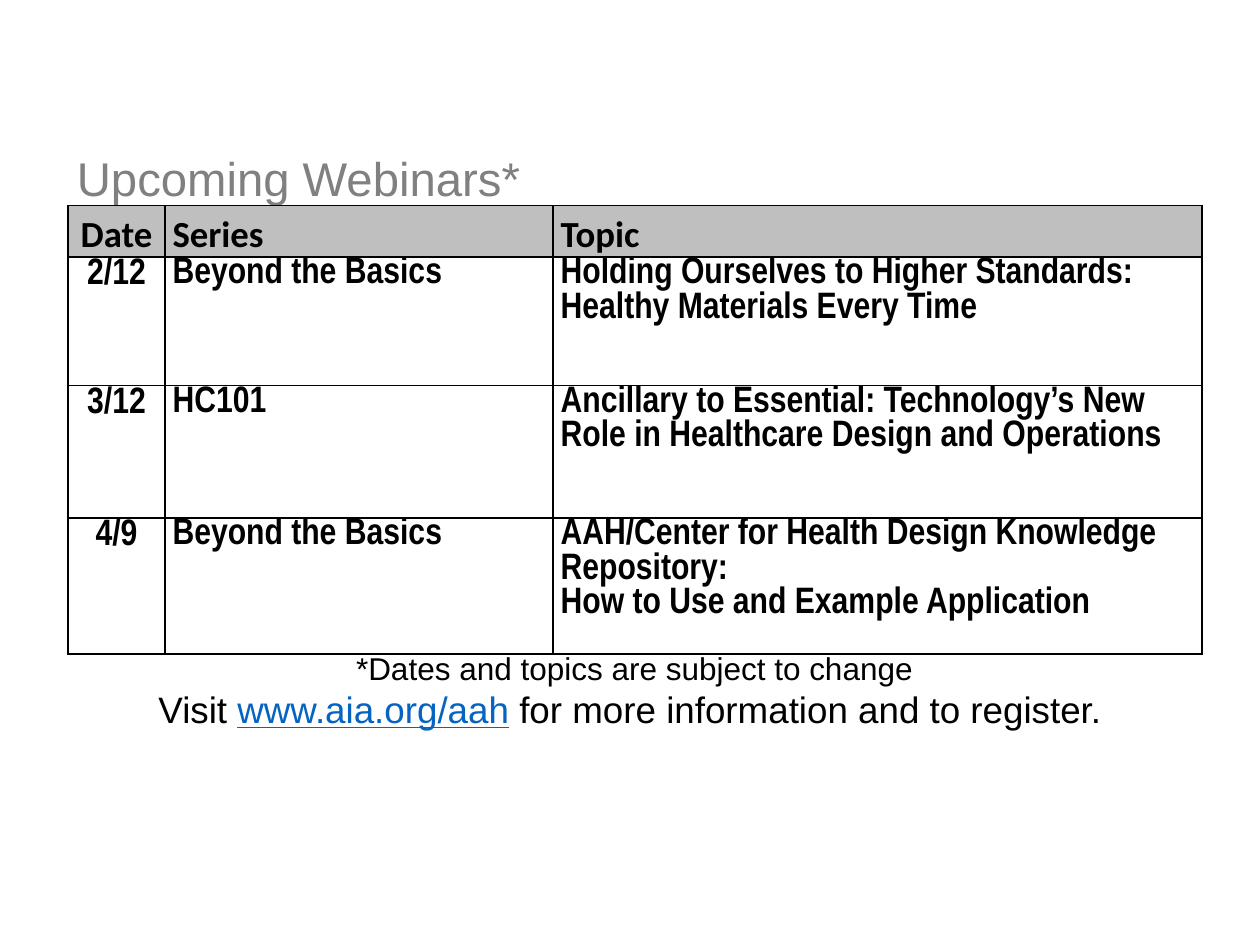
from lxml.etree import SubElement
from pptx import Presentation
from pptx.dml.color import RGBColor
from pptx.enum.text import MSO_ANCHOR as Anchor, MSO_AUTO_SIZE as AutoSize, PP_ALIGN as Align
from pptx.oxml.ns import qn
from pptx.util import Inches, Pt

BLACK, GREY, SILVER, LINK = "000000", "808080", "BFBFBF", "0563C1"
COLUMNS = [0.77, 3.08, 5.15]
ROWS = [0.38, 1.02, 1.05, 1.08]
LEFT, TABLE_TOP = 0.54, 1.63
WEBINARS = [
    ("Date", "Series", "Topic"),
    ("2/12", "Beyond the Basics",
     "Holding Ourselves to Higher Standards:\nHealthy Materials Every Time"),
    ("3/12", "HC101",
     "Ancillary to Essential: Technology’s New Role in Healthcare Design and Operations"),
    ("4/9", "Beyond the Basics",
     "AAH/Center for Health Design Knowledge Repository:\nHow to Use and Example Application"),
]


def color(value):
    return RGBColor.from_string(value)


def style(span, size, name="Arial", fill=BLACK, bold=False):
    font = span.font
    font.size, font.name, font.bold = Pt(size), name, bold
    font.color.rgb = color(fill)


def set_margins(holder, sides, top, bottom):
    holder.margin_left = holder.margin_right = Inches(sides)
    holder.margin_top, holder.margin_bottom = Inches(top), Inches(bottom)


def add_borders(cell):
    """Draw a thin black line on all four sides of a cell."""
    properties = cell._tc.get_or_add_tcPr()
    for position, side in enumerate(("lnL", "lnR", "lnT", "lnB")):
        line = SubElement(properties, qn(f"a:{side}"), w=str(Pt(1)))
        fill = SubElement(line, qn("a:solidFill"))
        SubElement(fill, qn("a:srgbClr"), val=BLACK)
        properties.remove(line)
        properties.insert(position, line)


def add_title(page, text):
    title = page.shapes.title
    title.left, title.top, title.width, title.height = map(Inches, (LEFT, 0.94, sum(COLUMNS), 0.94))
    frame = title.text_frame
    frame.text = text
    frame.auto_size = AutoSize.NONE
    frame.vertical_anchor = Anchor.MIDDLE
    set_margins(frame, 0.07, 0.04, 0.04)
    para = frame.paragraphs[0]
    para.alignment = Align.LEFT
    style(para.runs[0], 27, fill=GREY)


def fill_cell(cell, text, is_header, is_date):
    cell.text = text
    if is_date and not is_header:
        set_margins(cell, 0.01, 0.01, 0)
    else:
        set_margins(cell, 0.06, 0, 0)
    if is_header:
        cell.fill.solid()
        cell.fill.fore_color.rgb = color(SILVER)
    else:
        cell.fill.background()
    add_borders(cell)
    for para in cell.text_frame.paragraphs:
        para.alignment = Align.CENTER if is_date else Align.LEFT
        if is_header:
            para.line_spacing = 1.15
        style(para.runs[0], 21, "Calibri" if is_header else "Arial Narrow", bold=True)


def add_schedule(page):
    table = page.shapes.add_table(
        len(ROWS), len(COLUMNS), Inches(LEFT), Inches(TABLE_TOP),
        Inches(sum(COLUMNS)), Inches(sum(ROWS))).table
    for column, width in zip(table.columns, COLUMNS):
        column.width = Inches(width)
    for row, height in zip(table.rows, ROWS):
        row.height = Inches(height)
    for r, webinar in enumerate(WEBINARS):
        for c, text in enumerate(webinar):
            fill_cell(table.cell(r, c), text, r == 0, c == 0)


def add_note(page, place, parts, size):
    """Add a centred line from (text, colour) parts; link parts are underlined."""
    box = page.shapes.add_textbox(*map(Inches, place))
    frame = box.text_frame
    frame.word_wrap = True
    para = frame.paragraphs[0]
    para.alignment = Align.CENTER
    for text, fill in parts:
        span = para.add_run()
        span.text = text
        style(span, size, fill=fill)
        span.font.underline = fill == LINK
    return frame


def main():
    deck = Presentation()
    deck.slide_width, deck.slide_height = Inches(10), Inches(7.5)
    page = deck.slides.add_slide(deck.slide_layouts[5])
    add_title(page, "Upcoming Webinars*")
    add_schedule(page)
    add_note(page, (2.19, 5.1, 5.69, 0.4),
             [("*Dates and topics are subject to change", BLACK)], 18)
    register = add_note(page, (1, 5.41, 8.08, 0.45),
                        [("Visit ", BLACK), ("www.aia.org/aah", LINK),
                         (" for more information and to register. ", BLACK)], 21)
    set_margins(register, 0.07, 0.04, 0.04)
    deck.save("out.pptx")


if __name__ == "__main__":
    main()
